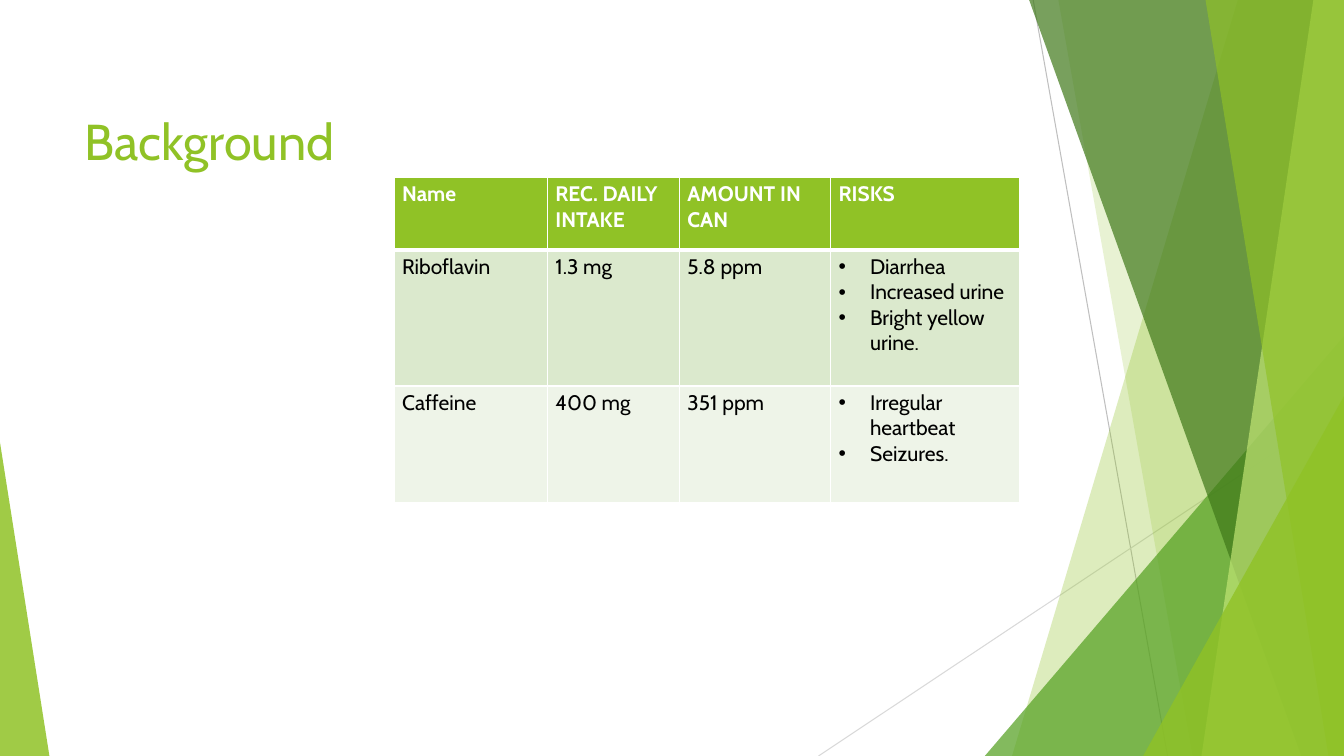
from dataclasses import dataclass

import lxml.etree
import pptx
import pptx.dml.color
import pptx.enum.shapes
import pptx.enum.text
import pptx.oxml.ns
import pptx.util

# Grid: 160 columns by 90 rows fill the slide
COLUMNS, ROWS = 160, 90
UNIT = pptx.util.Inches(7.5) // ROWS


@dataclass(frozen=True)
class Theme:
    font: str = "Cabin"
    title_size: int = 36
    table_size: int = 15
    accent: str = "90C226"
    leaf: str = "54A021"
    forest: str = "3F7819"
    lime: str = "C0E474"
    white: str = "FFFFFF"
    black: str = "000000"
    band_dark: str = "DBE9CD"
    band_light: str = "EEF4E8"
    line_dark: str = "BFBFBF"
    line_light: str = "D9D9D9"


THEME = Theme()


@dataclass(frozen=True)
class Ray:
    start: tuple[float, float]
    end: tuple[float, float]
    color: str


@dataclass(frozen=True)
class Facet:
    """Band reaching the right edge, slanting from top column to bottom column."""
    top: float
    bottom: float
    color: str
    opacity: int


@dataclass(frozen=True)
class Corner:
    """Right triangle standing on the bottom edge; peak is 0 (left) or 1 (right)."""
    left: float
    top: float
    width: float
    peak: int
    color: str
    opacity: int


@dataclass(frozen=True)
class TableRow:
    height: float
    fill: str
    text_color: str
    bold: bool
    bottom_border: int
    cells: tuple[str, str, str, tuple[str, ...]]


RAYS = [
    Ray((123, 0), (139, 90), THEME.line_dark),
    Ray((160, 48.36), (97.44, 90), THEME.line_light),
]
DECORATION = [
    Facet(147.36, 120.48, THEME.accent, 30),
    Facet(126, 141.96, THEME.accent, 20),
    Corner(117.24, 40, 42.76, 1, THEME.leaf, 72),
    Facet(122.52, 154.92, THEME.forest, 70),
    Facet(156.36, 143.04, THEME.lime, 70),
    Facet(143.52, 158.16, THEME.accent, 65),
    Corner(136.08, 47.16, 23.92, 1, THEME.accent, 80),
    Corner(0, 52.68, 5.88, 0, THEME.accent, 85),
]
COLUMN_WIDTHS = [18.24, 15.72, 18, 22.56]
TABLE_ROWS = [
    TableRow(8.64, THEME.accent, THEME.white, True, 3,
             ("Name", "REC. DAILY INTAKE", "AMOUNT IN CAN", ("RISKS",))),
    TableRow(16.2, THEME.band_dark, THEME.black, False, 1,
             ("Riboflavin", "1.3 mg", "5.8 ppm",
              ("Diarrhea", "Increased urine", "Bright yellow urine."))),
    TableRow(13.92, THEME.band_light, THEME.black, False, 1,
             ("Caffeine", "400 mg", "351 ppm",
              ("Irregular heartbeat", "Seizures."))),
]


def grid(count: float) -> int:
    return round(count * UNIT)


def rgb(color: str) -> pptx.dml.color.RGBColor:
    return pptx.dml.color.RGBColor.from_string(color)


def add_element(parent, tag: str, **attributes: str):
    return lxml.etree.SubElement(parent, pptx.oxml.ns.qn(tag), attributes)


def add_run(paragraph, text: str, size: int, color: str, bold: bool = False) -> None:
    run = paragraph.add_run()
    run.text = text
    run.font.name = THEME.font
    run.font.size = pptx.util.Pt(size)
    run.font.bold = bold
    run.font.color.rgb = rgb(color)


def draw_ray(slide, ray: Ray) -> None:
    connector = slide.shapes.add_connector(
        pptx.enum.shapes.MSO_CONNECTOR.STRAIGHT, *map(grid, ray.start + ray.end))
    connector.line.color.rgb = rgb(ray.color)
    connector.line.width = pptx.util.Pt(0.75)
    add_element(connector._element.spPr, "a:effectLst")


def draw_decoration(slide, part: Facet | Corner) -> None:
    if isinstance(part, Facet):
        builder = slide.shapes.build_freeform(grid(part.top), 0)
        outline = [(COLUMNS, 0), (COLUMNS, ROWS), (part.bottom, ROWS)]
        builder.add_line_segments([(grid(x), grid(y)) for x, y in outline], close=True)
        shape = builder.convert_to_shape()
    else:
        shape = slide.shapes.add_shape(
            pptx.enum.shapes.MSO_SHAPE.ISOSCELES_TRIANGLE, grid(part.left),
            grid(part.top), grid(part.width), grid(ROWS - part.top))
        shape.adjustments[0] = part.peak
    shape.shadow.inherit = False
    shape.line.fill.background()
    shape.fill.solid()
    shape.fill.fore_color.rgb = rgb(part.color)
    color_element = shape._element.spPr.find(".//" + pptx.oxml.ns.qn("a:srgbClr"))
    add_element(color_element, "a:alpha", val=str(part.opacity * 1000))


def draw_title(slide, text: str) -> None:
    box = slide.shapes.add_textbox(grid(8.88), grid(8.04), grid(48.96), grid(17.28))
    frame = box.text_frame
    frame.word_wrap = True
    frame.vertical_anchor = pptx.enum.text.MSO_ANCHOR.MIDDLE
    add_run(frame.paragraphs[0], text, THEME.title_size, THEME.accent)


def style_cell(cell, fill: str, top: int, bottom: int) -> None:
    properties = cell._tc.get_or_add_tcPr()
    for side, width in (("L", 1), ("R", 1), ("T", top), ("B", bottom)):
        border = add_element(properties, f"a:ln{side}", w=str(pptx.util.Pt(width)))
        solid = add_element(border, "a:solidFill")
        add_element(solid, "a:srgbClr", val=THEME.white)
    cell.fill.solid()
    cell.fill.fore_color.rgb = rgb(fill)
    cell.margin_left = cell.margin_right = grid(0.96)
    cell.margin_top = cell.margin_bottom = grid(0.48)


def add_bullet(paragraph) -> None:
    properties = paragraph._p.get_or_add_pPr()
    indent = grid(3.75)
    properties.set("marL", str(indent))
    properties.set("indent", str(-indent))
    add_element(properties, "a:buFont", typeface="Arial")
    add_element(properties, "a:buChar", char="•")


def draw_table(slide) -> None:
    table = slide.shapes.add_table(
        len(TABLE_ROWS), len(COLUMN_WIDTHS), grid(46.92), grid(21.12),
        grid(sum(COLUMN_WIDTHS)), grid(sum(row.height for row in TABLE_ROWS))).table
    for column, width in zip(table.columns, COLUMN_WIDTHS):
        column.width = grid(width)
    top_border = 1
    for row_index, row in enumerate(TABLE_ROWS):
        table.rows[row_index].height = grid(row.height)
        for column_index, content in enumerate(row.cells):
            cell = table.cell(row_index, column_index)
            style_cell(cell, row.fill, top_border, row.bottom_border)
            lines = (content,) if isinstance(content, str) else content
            frame = cell.text_frame
            for line_index, line in enumerate(lines):
                paragraph = frame.add_paragraph() if line_index else frame.paragraphs[0]
                if len(lines) > 1:
                    add_bullet(paragraph)
                add_run(paragraph, line, THEME.table_size, row.text_color, row.bold)
        top_border = row.bottom_border


def main() -> None:
    presentation = pptx.Presentation()
    presentation.slide_width = grid(COLUMNS)
    presentation.slide_height = grid(ROWS)
    slide = presentation.slides.add_slide(presentation.slide_layouts[6])
    # Background decoration
    for ray in RAYS:
        draw_ray(slide, ray)
    for part in DECORATION:
        draw_decoration(slide, part)
    # Content
    draw_title(slide, "Background")
    draw_table(slide)
    presentation.save("out.pptx")


if __name__ == "__main__":
    main()
